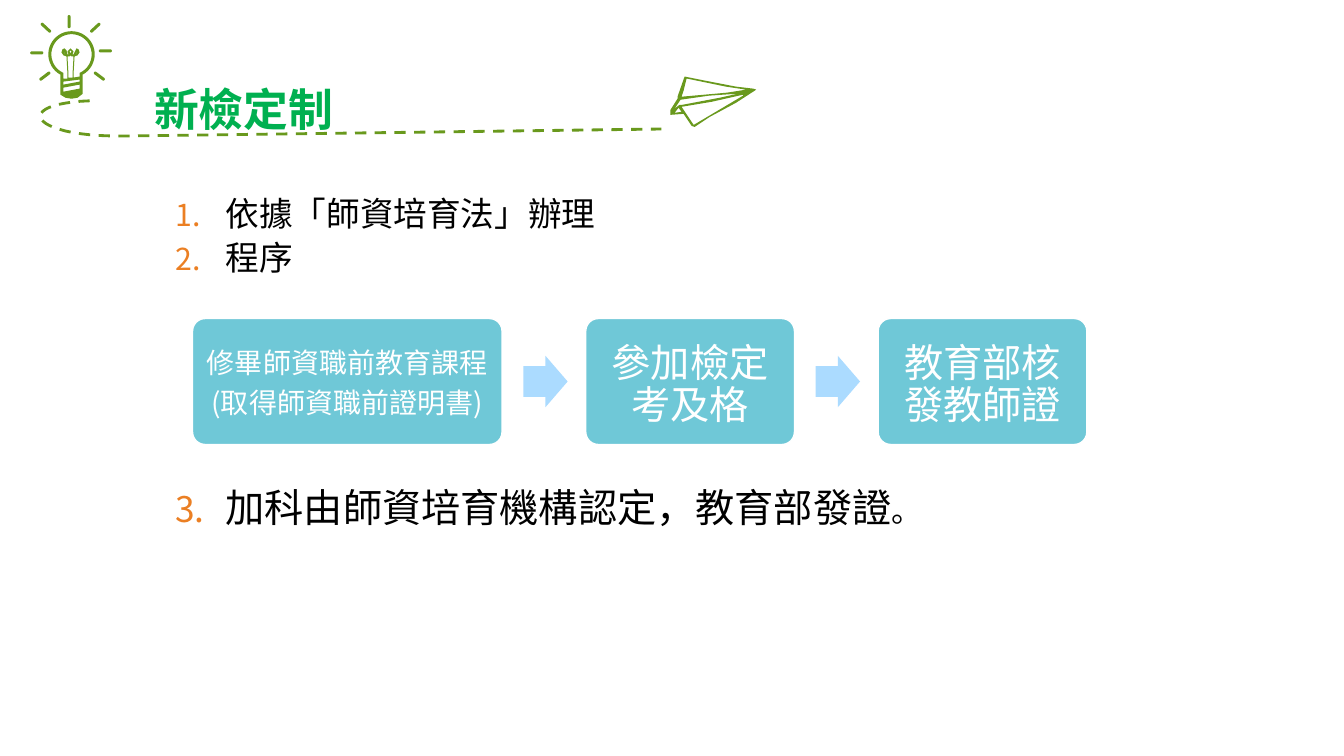
"""Builds the slide on the new teacher certification procedure."""
from math import cos, radians, sin
from lxml.etree import SubElement
from pptx import Presentation
from pptx.dml.color import RGBColor
from pptx.enum.dml import MSO_LINE
from pptx.enum.shapes import MSO_SHAPE
from pptx.enum.text import MSO_ANCHOR, PP_ALIGN
from pptx.oxml.ns import qn
from pptx.util import Pt

PX = 9144
FINE = 10
LEAF = RGBColor(0x69, 0x99, 0x1D)
GREEN = RGBColor(0x00, 0xB0, 0x50)
TEAL = RGBColor(0x6F, 0xC8, 0xD7)
SKY = RGBColor(0xAB, 0xDB, 0xFF)
BLACK = RGBColor(0, 0, 0)
WHITE = RGBColor(255, 255, 255)
SANS = "Noto Sans CJK SC"

deck = Presentation()
deck.slide_width, deck.slide_height = 1333 * PX, 750 * PX
slide = deck.slides.add_slide(deck.slide_layouts[6])
shapes = slide.shapes


def trace(loops, close=True):
    """Draws one outline made of several loops."""
    loops = [[(x * FINE, y * FINE) for x, y in loop] for loop in loops]
    pen = shapes.build_freeform(*loops[0][0], scale=PX / FINE)
    pen.add_line_segments(loops[0][1:], close=close)
    for loop in loops[1:]:
        pen.move_to(*loop[0])
        pen.add_line_segments(loop[1:], close=close)
    form = pen.convert_to_shape()
    form.shadow.inherit = False
    return form


def write(para, text, size, color, font=SANS):
    """Adds one run of text."""
    run = para.add_run()
    run.text = text
    run.font.size = Pt(size)
    run.font.color.rgb = color
    run.font.name = font
    SubElement(run.font._element, qn("a:ea"), typeface=font)
    return run


rim = [(71 + 23 * cos(radians(a)), 54 + 23 * sin(radians(a))) for a in range(62, -243, -8)]
glass = [(71 + 20 * cos(radians(a)), 54 + 20 * sin(radians(a))) for a in range(66, -247, -8)]
base = [(60, 75), (60, 94), (65, 97), (71, 98), (77, 97), (81, 94), (82, 93), (82, 75)]
wire = [(63, 73), (63, 78), (67, 78), (67, 74), (66, 56), (63, 55), (61, 52), (62, 49),
        (64, 48), (66, 50), (67, 54), (68, 54), (67, 51), (70, 48), (73, 51), (72, 54),
        (73, 54), (75, 50), (76, 48), (78, 49), (79, 52), (77, 55), (74, 56), (73, 74),
        (73, 77), (79, 76), (79, 73)]
bulb = trace([
    rim + base,
    glass + wire,
    [(63, 91), (79, 88), (79, 84), (63, 87)],
    [(63, 84), (79, 81), (79, 79), (63, 81)],
    [(71, 56), (70, 55), (69, 56), (67, 56), (68, 74), (68, 77), (72, 77), (72, 74), (73, 56)],
    [(71, 51), (70, 50), (69, 51), (70, 53)],
    [(65, 54), (64, 52), (63, 51), (64, 53)],
    [(75, 54), (76, 53), (77, 51), (76, 52)],
])
plane = trace([
    [(750, 89), (744, 93), (730, 102), (704, 116), (689, 126), (686, 125), (678, 113),
     (665, 114), (665, 109), (672, 98), (672, 96), (679, 76), (699, 80), (730, 86), (747, 88)],
    [(681, 78), (678, 90), (676, 96), (721, 92), (740, 89), (720, 86)],
    [(676, 106), (688, 124), (737, 95), (737, 94), (706, 101)],
    [(675, 99), (669, 108), (674, 104), (677, 104), (714, 97), (732, 93), (703, 95)],
    [(669, 112), (676, 111), (673, 107)],
])
for form in (bulb, plane):
    form.fill.solid()
    form.fill.fore_color.rgb = LEAF
    form.line.fill.background()

for left, top, turn in ((98, 49, 0), (62, 20, 90), (30, 51, 0), (38, 74, -37),
                        (92, 74, 37), (39, 26, 43), (88, 26, -43)):
    ray = shapes.add_shape(MSO_SHAPE.ROUNDED_RECTANGLE, left * PX, top * PX, 13 * PX, 3 * PX)
    ray.adjustments[0] = 0.5
    ray.rotation = turn
    ray.shadow.inherit = False
    ray.fill.solid()
    ray.fill.fore_color.rgb = LEAF
    ray.line.fill.background()

ends = ((89, 100), (12, 103), (29, 135), (118, 135))
bend = []
for step in range(25):
    t = step / 24
    parts = ((1 - t) ** 3, 3 * t * (1 - t) ** 2, 3 * t * t * (1 - t), t ** 3)
    bend.append(tuple(sum(k * end[axis] for k, end in zip(parts, ends)) for axis in (0, 1)))
trail = trace([bend + [(656, 128)]], close=False)
trail.fill.background()
trail.line.color.rgb = LEAF
trail.line.width = Pt(2)
trail.line.dash_style = MSO_LINE.DASH

title = shapes.add_textbox(143 * PX, 78 * PX, 432 * PX, 60 * PX).text_frame
title.word_wrap = True
title.paragraphs[0].line_spacing = Pt(37)
write(title.paragraphs[0], "新檢定制", 32, GREEN, "Noto Sans CJK JP").font.bold = True

body = shapes.add_textbox(159 * PX, 188 * PX, 999 * PX, 454 * PX).text_frame
body.word_wrap = True
items = (
    (0, 28, [("依據「師資培育法」辦理", 24)]),
    (3, 28, [("程序", 24)]),
    (148, 33, [("加科由師資培育機構認定，教育部發證", 28), ("。", 22)]),
)
for index, (before, pitch, runs) in enumerate(items):
    para = body.add_paragraph() if index else body.paragraphs[0]
    props = para._p.get_or_add_pPr()
    props.set("marL", str(55 * PX))
    props.set("indent", str(-50 * PX))
    SubElement(SubElement(props, qn("a:buClr")), qn("a:srgbClr"), val="EB7F23")
    SubElement(props, qn("a:buSzPct"), val="90000")
    SubElement(props, qn("a:buFont"), typeface=SANS)
    SubElement(props, qn("a:buAutoNum"), type="arabicPeriod")
    para.space_before = Pt(before)
    para.line_spacing = Pt(pitch)
    for text, size in runs:
        write(para, text, size, BLACK)

steps = (
    (307, 20, 22, 6, 10, 6, ["修畢師資職前教育課程", "(取得師資職前證明書)"]),
    (207, 28, 30, 12, 16, 8, ["參加檢定考及格"]),
    (207, 28, 30, 12, 16, 8, ["教育部核發教師證"]),
)
left = 191
for index, (width, size, pitch, side, head, foot, lines) in enumerate(steps):
    if index:
        arrow = shapes.add_shape(MSO_SHAPE.RIGHT_ARROW, (left - 62) * PX, 353 * PX, 44 * PX, 51 * PX)
        arrow.adjustments[0] = 0.6
        arrow.adjustments[1] = 0.5
        arrow.shadow.inherit = False
        arrow.fill.solid()
        arrow.fill.fore_color.rgb = SKY
        arrow.line.fill.background()
    box = shapes.add_shape(MSO_SHAPE.ROUNDED_RECTANGLE, left * PX, 316 * PX, width * PX, 125 * PX)
    box.adjustments[0] = 0.1
    box.shadow.inherit = False
    box.fill.solid()
    box.fill.fore_color.rgb = TEAL
    box.line.color.rgb = WHITE
    box.line.width = Pt(1)
    frame = box.text_frame
    frame.word_wrap = True
    frame.vertical_anchor = MSO_ANCHOR.MIDDLE
    frame.margin_left = frame.margin_right = side * PX
    frame.margin_top, frame.margin_bottom = head * PX, foot * PX
    for row, text in enumerate(lines):
        para = frame.add_paragraph() if row else frame.paragraphs[0]
        para.alignment = PP_ALIGN.CENTER
        para.line_spacing = Pt(pitch)
        para.space_before = Pt(6.5 if row else 0)
        write(para, text, size, WHITE)
    left += width + 83

deck.save("out.pptx")
